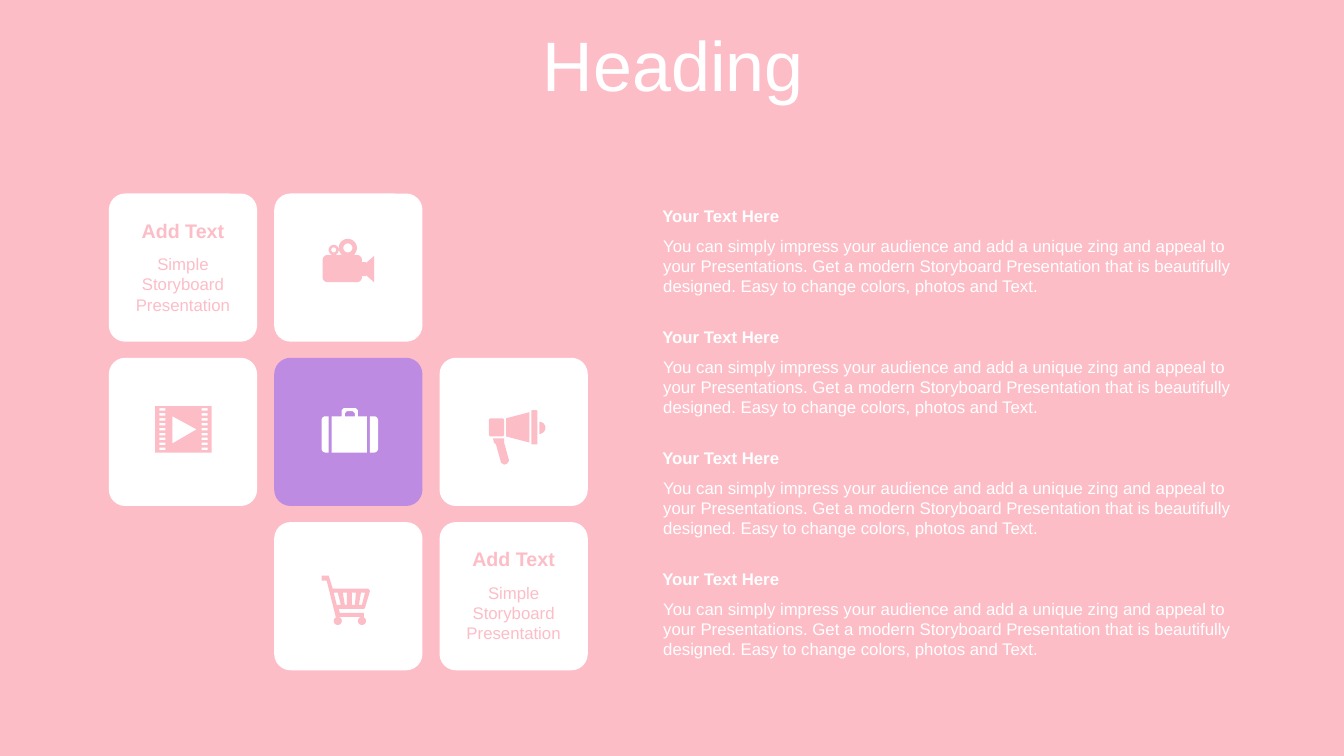
from math import cos, radians, sin

from pptx import Presentation
from pptx.dml.color import RGBColor
from pptx.enum.shapes import MSO_SHAPE
from pptx.enum.text import MSO_ANCHOR, PP_ALIGN
from pptx.util import Pt

PX = 9144  # 100 px to the inch
PINK = RGBColor(0xFD, 0xBD, 0xC7)
WHITE = RGBColor(0xFF, 0xFF, 0xFF)
LILAC = RGBColor(0xBE, 0x8B, 0xE2)
FONT = "Arial"

SIDE = 147
GRID_X, GRID_Y = 108, 192
STEP_X, STEP_Y = 164, 163

NOTE = "Simple Storyboard Presentation"
BODY = (
    "You can simply impress your audience and add a unique zing and appeal to "
    "your Presentations. Get a modern Storyboard Presentation that is "
    "beautifully designed. Easy to change colors, photos and Text."
)


def px(n):
    return round(n * PX)


def paint(shape, color):
    shape.shadow.inherit = False
    shape.fill.solid()
    shape.fill.fore_color.rgb = color
    shape.line.fill.background()


def write(slide, box, text, size, color, bold=False, align=PP_ALIGN.LEFT):
    """Add a wrapping text box with one run and return it."""
    label = slide.shapes.add_textbox(*map(px, box))
    label.text_frame.word_wrap = True
    para = label.text_frame.paragraphs[0]
    para.alignment = align
    run = para.add_run()
    run.text = text
    run.font.name = FONT
    run.font.size = Pt(size)
    run.font.bold = bold
    run.font.color.rgb = color
    return label


def arc(x, y, r, start=0, end=360):
    """Points on a circle, clockwise in degrees from the right."""
    steps = max(6, (end - start) // 10)
    turns = [radians(start + (end - start) * i / steps) for i in range(steps + 1)]
    return [(x + r * cos(a), y + r * sin(a)) for a in turns]


def rect(x, y, w, h, r=0):
    """Outline of a rectangle, with corners of radius r."""
    if not r:
        return [(x, y), (x + w, y), (x + w, y + h), (x, y + h)]
    return (
        arc(x + r, y + r, r, 180, 270)
        + arc(x + w - r, y + r, r, 270, 360)
        + arc(x + w - r, y + h - r, r, 0, 90)
        + arc(x + r, y + h - r, r, 90, 180)
    )


CAMERA = [
    rect(0, 16, 39, 27, 5),
    [(39, 23), (43, 23), (43, 24), (51, 17), (51, 43), (43, 36), (43, 37), (39, 37)],
    arc(11, 11, 5),
    arc(11, 11, 2.5),
    arc(25, 9, 9, 129, 411),
    arc(25, 9, 4.5),
]
FILM = [
    rect(0, 0, 56, 46),
    [(17, 10), (17, 37), (41, 23)],
    *[rect(x, 2 + 4.88 * i, 6, 2.5) for x in (4, 46) for i in range(9)],
]
CASE = [
    [(7, 44), *arc(4, 40, 4, 90, 180), *arc(4, 12, 4, 180, 270), (7, 8)],
    [(48, 8), *arc(52, 12, 4, 270, 360), *arc(52, 40, 4, 0, 90), (48, 44)],
    [(10, 8), (20, 8), (20, 2), (22, 0), (34, 0), (36, 2), (36, 8),
     (45, 8), (45, 44), (10, 44)],
    [(23, 8), (23, 5), (25, 3), (31, 3), (33, 5), (33, 8)],
]
HORN = [
    rect(0, 8, 15, 18, 2),
    [(17, 8), (40, 2), (40, 32), (17, 26)],
    rect(42, 0, 6, 34, 1),
    arc(50, 17.5, 6, -90, 90),
    [(4, 28), (15, 28), (15, 32), (20, 50), (18, 53), (15, 54), (12, 52),
     (7, 34), (5, 32)],
]
CART = [
    [(0, 0), (7, 0), (11, 13), (46, 13), (48, 15), (43, 32), (42, 33), (17, 33),
     (18, 37), (42, 37), (42, 41), (14, 41), (5, 5), (0, 5)],
    arc(16, 45, 4),
    arc(40, 45, 4),
    [(12, 17), (16, 17), (19, 29), (15, 29)],
    [(21, 17), (25, 17), (25, 29), (23, 29)],
    [(30, 17), (34, 17), (33, 29), (30, 29)],
    [(39, 17), (43, 17), (40, 29), (37, 29)],
]

# column, row, icon outlines, icon offset in the tile
ICONS = [
    (1, 0, CAMERA, 48, 45),
    (0, 1, FILM, 46, 48),
    (1, 1, CASE, 47, 50),
    (2, 1, HORN, 49, 52),
    (1, 2, CART, 47, 53),
]


def draw_icon(slide, x, y, rings, color):
    paths = [[(px(x + a), px(y + b)) for a, b in ring] for ring in rings]
    pen = slide.shapes.build_freeform(*paths[0][0])
    for i, path in enumerate(paths):
        if i:
            pen.move_to(*path[0])
        pen.add_line_segments(path[1:], close=True)
    paint(pen.convert_to_shape(), color)


def add_tile(slide, col, row, color):
    """Add a grid tile and return its left and top."""
    x, y = GRID_X + STEP_X * col, GRID_Y + STEP_Y * row
    tile = slide.shapes.add_shape(
        MSO_SHAPE.ROUNDED_RECTANGLE, *map(px, (x, y, SIDE, SIDE)))
    tile.adjustments[0] = 0.11
    paint(tile, color)
    return x, y


def icon_tile(slide, col, row, rings, dx, dy):
    core = col == row == 1
    x, y = add_tile(slide, col, row, LILAC if core else WHITE)
    draw_icon(slide, x + dx, y + dy, rings, WHITE if core else PINK)


def text_tile(slide, col, row):
    x, y = add_tile(slide, col, row, WHITE)
    mid = PP_ALIGN.CENTER
    write(slide, (x + 7, y + 20, 133, 34), "Add Text", 14, PINK, True, mid)
    write(slide, (x + 7, y + 55, 133, 71), NOTE, 12, PINK, align=mid)


def text_block(slide, x, y, w):
    write(slide, (x, y, w, 30), "Your Text Here", 12, WHITE, True)
    write(slide, (x + 1, y + 30, w - 1, 71), BODY, 12, WHITE)


def add_title(slide, box):
    title = write(slide, box, "Heading", 50, WHITE, align=PP_ALIGN.CENTER)
    title.text_frame.vertical_anchor = MSO_ANCHOR.MIDDLE
    para = title.text_frame.paragraphs[0]
    para.line_spacing = 0.8
    para.space_before = Pt(10)


def main():
    deck = Presentation()
    deck.slide_width, deck.slide_height = px(1333), px(750)
    slide = deck.slides.add_slide(deck.slide_layouts[6])
    slide.background.fill.solid()
    slide.background.fill.fore_color.rgb = PINK

    add_title(slide, (35, 31, 1266, 79))
    for spot in ((0, 0), (2, 2)):
        text_tile(slide, *spot)
    for icon in ICONS:
        icon_tile(slide, *icon)
    for i in range(4):
        text_block(slide, 647, 199 + 120 * i, 585)
    deck.save("out.pptx")


if __name__ == "__main__":
    main()
